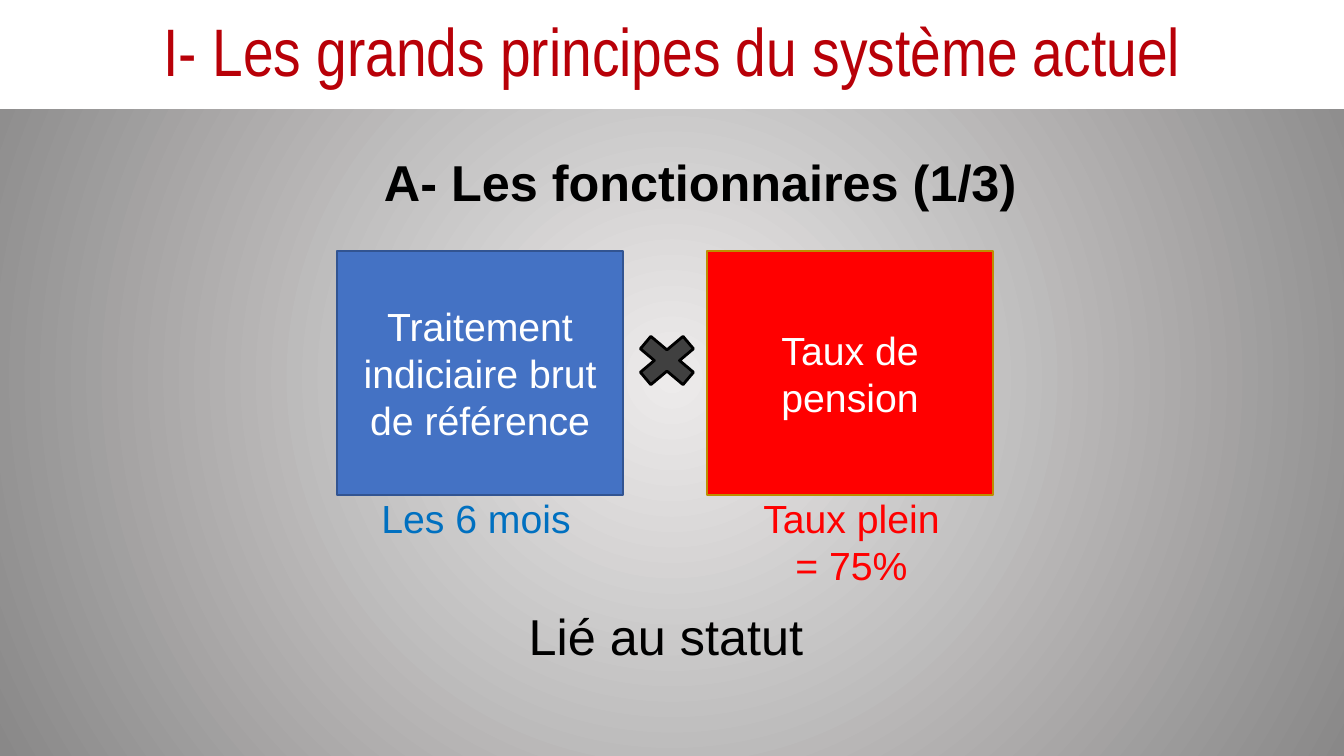
from dataclasses import dataclass

from lxml.etree import SubElement
from pptx import Presentation
from pptx.dml.color import RGBColor
from pptx.enum.shapes import MSO_SHAPE as Shape
from pptx.enum.text import MSO_ANCHOR as Anchor
from pptx.enum.text import MSO_AUTO_SIZE as AutoSize
from pptx.enum.text import PP_ALIGN as Align
from pptx.oxml.ns import qn
from pptx.util import Emu, Pt

SLIDE_W, SLIDE_H = 1344, 756
EMU_PER_PX = 12192000 / SLIDE_W


@dataclass(frozen=True)
class Theme:
    glow: str = "EDEBEB"
    edge: str = "898888"
    white: str = "FFFFFF"
    black: str = "000000"
    title: str = "B80008"
    salary: str = "4472C4"
    salary_line: str = "325491"
    salary_note: str = "0070C0"
    rate: str = "FF0000"
    rate_line: str = "BD8E00"
    times: str = "404040"
    body_font: str = "Arial"
    title_font: str = "Arial Narrow"
    title_size: int = 48
    heading_size: int = 36
    body_size: int = 28


THEME = Theme()


def px(length):
    return Emu(round(length * EMU_PER_PX))


def rgb(color):
    return RGBColor.from_string(color)


def write(frame, text, *, color, size=THEME.body_size, font=THEME.body_font,
          bold=False, anchor=Anchor.TOP, spacing=None):
    frame.word_wrap = True
    frame.vertical_anchor = anchor
    frame.text = text
    for paragraph in frame.paragraphs:
        paragraph.alignment = Align.CENTER
        paragraph.line_spacing = spacing
        for run in paragraph.runs:
            run.font.name = font
            run.font.size = Pt(size)
            run.font.bold = bold
            run.font.color.rgb = rgb(color)


def add_block(slide, kind, bounds, fill, line=None):
    block = slide.shapes.add_shape(kind, *map(px, bounds))
    block.shadow.inherit = False
    block.fill.solid()
    block.fill.fore_color.rgb = rgb(fill)
    if line:
        block.line.color.rgb = rgb(line)
        block.line.width = Pt(2)
    else:
        block.line.fill.background()
    return block


def add_label(slide, bounds, text, **style):
    frame = slide.shapes.add_textbox(*map(px, bounds)).text_frame
    write(frame, text, **style)
    return frame


def paint_background(slide):
    fill = slide.background.fill
    fill.gradient()
    for stop, color in zip(fill.gradient_stops, (THEME.glow, THEME.edge)):
        stop.color.rgb = rgb(color)
    linear = next(slide.element.iter(qn("a:lin")))
    gradient = linear.getparent()
    gradient.remove(linear)
    circle = SubElement(gradient, qn("a:path"), {"path": "circle"})
    SubElement(circle, qn("a:fillToRect"), dict.fromkeys("ltrb", "50000"))


def add_factor(slide, left, text, fill, line):
    factor = add_block(slide, Shape.FLOWCHART_PROCESS,
                       (left, 251, 286, 244), fill, line)
    write(factor.text_frame, text, color=THEME.white, anchor=Anchor.MIDDLE)


def add_title(slide, text):
    banner = add_block(slide, Shape.RECTANGLE, (0, 0, SLIDE_W, 109), THEME.white)
    write(banner.text_frame, text, color=THEME.title, size=THEME.title_size,
          font=THEME.title_font, anchor=Anchor.MIDDLE, spacing=0.9)


def main():
    deck = Presentation()
    deck.slide_width, deck.slide_height = px(SLIDE_W), px(SLIDE_H)
    slide = deck.slides.add_slide(deck.slide_layouts[6])
    paint_background(slide)

    add_label(slide, (199, 146, 1003, 167), "A- Les fonctionnaires (1/3)",
              color=THEME.black, size=THEME.heading_size, bold=True)
    add_factor(slide, 337, "Traitement indiciaire brut\nde référence",
               THEME.salary, THEME.salary_line)
    add_factor(slide, 707, "Taux de pension", THEME.rate, THEME.rate_line)
    times = add_block(slide, Shape.MATH_MULTIPLY, (626, 326, 82, 69),
                      THEME.times, THEME.black)
    times.adjustments[0] = 0.235

    add_label(slide, (709, 489, 285, 92), "Taux plein\v= 75%", color=THEME.rate)
    add_label(slide, (333, 489, 286, 92), "Les 6 mois", color=THEME.salary_note)
    status = add_label(slide, (407, 600, 518, 72), "Lié au statut",
                       color=THEME.black, size=THEME.heading_size)
    status.auto_size = AutoSize.SHAPE_TO_FIT_TEXT
    add_title(slide, "I- Les grands principes du système actuel")

    deck.save("out.pptx")


if __name__ == "__main__":
    main()
